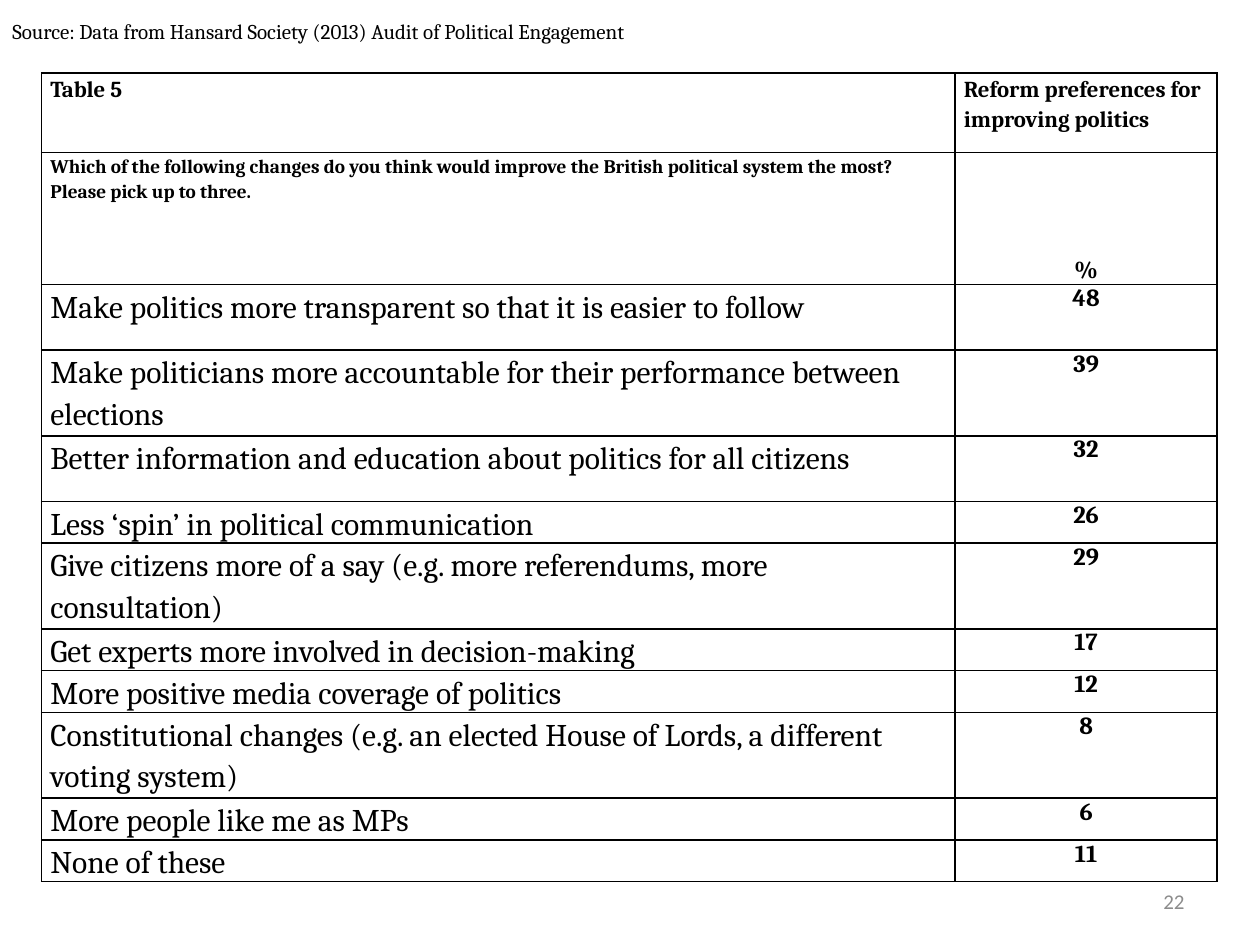
import pptx
import pptx.util
import pptx.dml.color
import pptx.enum.text
import pptx.oxml.ns
import lxml.etree

ALIGN = pptx.enum.text.PP_ALIGN
ANCHOR = pptx.enum.text.MSO_ANCHOR


def color(value):
    """Turn a hex string into a colour."""
    return pptx.dml.color.RGBColor.from_string(value)


def add_xml(parent, tag, **attrs):
    """Append a DrawingML child element."""
    return lxml.etree.SubElement(parent, pptx.oxml.ns.qn(tag), attrs)


class Deck:
    """Draw styled elements on a grid of 100 columns by 75 rows."""

    font, ink, muted = "Cambria", "000000", "8C8C8C"

    def __init__(self):
        """Open a presentation with one blank slide."""
        self.prs = pptx.Presentation()
        self.prs.slide_width = pptx.util.Inches(10)
        self.prs.slide_height = pptx.util.Inches(7.5)
        self.s = self.prs.slides.add_slide(self.prs.slide_layouts[6])

    def x(self, columns):
        """Convert grid columns to a length."""
        return round(self.prs.slide_width * columns / 100)

    def y(self, rows):
        """Convert grid rows to a length."""
        return round(self.prs.slide_height * rows / 75)

    def set_text(self, tf, text, size, bold=False, align=ALIGN.LEFT, hue=None, font=None):
        """Set the text of a frame and format it."""
        tf.text = text
        p = tf.paragraphs[0]
        p.alignment = align
        for r in p.runs:
            r.font.name = font or self.font
            r.font.size = pptx.util.Pt(size)
            r.font.bold = bold
            r.font.color.rgb = color(hue or self.ink)
        return p

    def label(self, left, top, width, height, text, size, **style):
        """Add a vertically centred text box."""
        sp = self.s.shapes.add_textbox(self.x(left), self.y(top), self.x(width), self.y(height))
        tf = sp.text_frame
        tf.word_wrap = True
        tf.vertical_anchor = ANCHOR.MIDDLE
        self.set_text(tf, text, size, **style)

    def borders(self, cell, hidden=""):
        """Rule the sides of a cell, except the hidden one."""
        tc_pr = cell._tc.get_or_add_tcPr()
        for side in "LRTB":
            line = add_xml(tc_pr, f"a:ln{side}", w=str(pptx.util.Pt(1)))
            if side == hidden:
                add_xml(line, "a:noFill")
            else:
                add_xml(add_xml(line, "a:solidFill"), "a:srgbClr", val=self.ink)

    def cell(self, cell, text, size, bold, align, spaced, hidden=""):
        """Fill, rule and letter one table cell."""
        cell.margin_left = cell.margin_right = self.x(0.7)
        cell.margin_top = cell.margin_bottom = 0
        self.borders(cell, hidden)
        cell.fill.background()
        p = self.set_text(cell.text_frame, text, size, bold, align)
        if spaced:
            p.line_spacing = 1.15
            p.space_after = pptx.util.Pt(10)
        if not text:
            add_xml(p._p, "a:endParaRPr", sz=str(size * 100))

    def table(self, left, top, widths, heights):
        """Add a plain table with the given columns and rows."""
        frame = self.s.shapes.add_table(
            len(heights), len(widths), self.x(left), self.y(top),
            self.x(sum(widths)), self.y(sum(heights)))
        table = frame.table
        table.first_row = table.horz_banding = False
        for column, width in zip(table.columns, widths):
            column.width = self.x(width)
        for row, height in zip(table.rows, heights):
            row.height = self.y(height)
        return table


HEADINGS = [
    ("Table 5", "Reform preferences for improving politics", 13, ALIGN.LEFT, ""),
    ("Which of the following changes do you think would improve the British "
     "political system the most? Please pick up to three.", "", 11, ALIGN.LEFT, "B"),
    ("", "%", 14, ALIGN.CENTER, "T"),
]
REFORMS = [
    ("Make politics more transparent so that it is easier to follow", 48),
    ("Make politicians more accountable for their performance between elections", 39),
    ("Better information and education about politics for all citizens", 32),
    ("Less ‘spin’ in political communication", 26),
    ("Give citizens more of a say (e.g. more referendums, more consultation)", 29),
    ("Get experts more involved in decision-making", 17),
    ("More positive media coverage of politics", 12),
    ("Constitutional changes (e.g. an elected House of Lords, a different voting system)", 8),
    ("More people like me as MPs", 6),
    ("None of these", 11),
]
ONE, ROOMY, TWO = 3.3, 5.2, 6.8
HEIGHTS = [6.3, 7.9, 2.6, ROOMY, TWO, ROOMY, ONE, TWO, ONE, ONE, TWO, ONE, ONE]


def main():
    """Build the reform preferences slide."""
    deck = Deck()
    table = deck.table(3.3, 5.8, [72.5, 20.8], HEIGHTS)
    for i, (question, heading, size, align, hidden) in enumerate(HEADINGS):
        deck.cell(table.cell(i, 0), question, size, True, ALIGN.LEFT, True, hidden)
        deck.cell(table.cell(i, 1), heading, size, True, align, True, hidden)
    for i, (reform, percent) in enumerate(REFORMS, len(HEADINGS)):
        deck.cell(table.cell(i, 0), reform, 18, False, ALIGN.LEFT, True)
        deck.cell(table.cell(i, 1), str(percent), 14, True, ALIGN.CENTER, False)
    deck.label(0, 0, 100, 5,
               "Source: Data from Hansard Society (2013) Audit of Political Engagement", 12)
    deck.label(71.7, 69.5, 23.3, 4, "22", 12,
               align=ALIGN.RIGHT, hue=deck.muted, font="Calibri")
    deck.prs.save("out.pptx")


if __name__ == "__main__":
    main()
